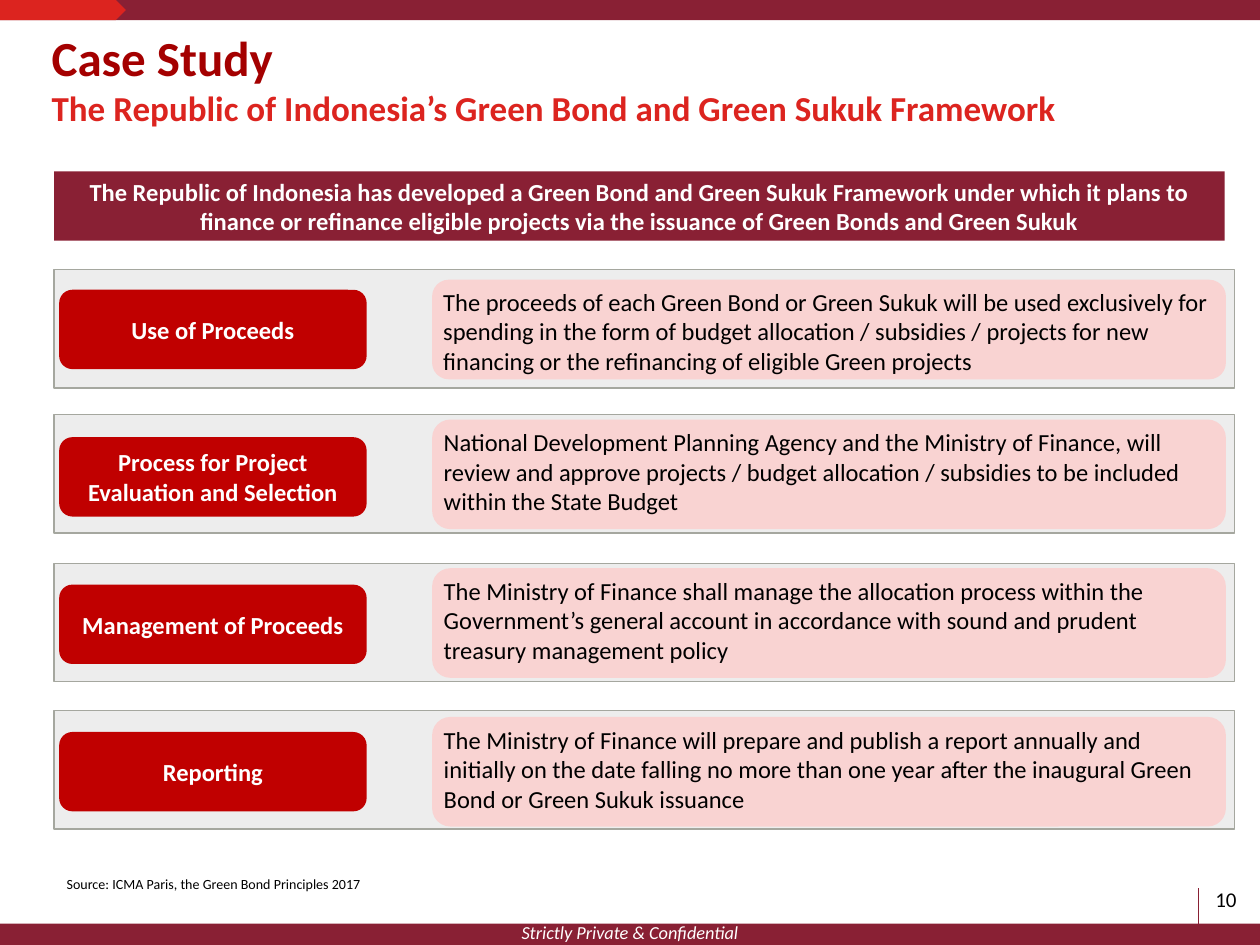
from lxml import etree
from pptx import Presentation
from pptx.dml.color import RGBColor
from pptx.enum.shapes import MSO_CONNECTOR, MSO_SHAPE
from pptx.enum.text import MSO_ANCHOR, MSO_AUTO_SIZE, PP_ALIGN
from pptx.oxml.ns import qn
from pptx.util import Inches, Pt

COLORS = {
    "maroon": "892034", "scarlet": "DC241F", "title": "A40000", "label": "C00000",
    "pink": "F9D3D2", "panel": "D7D7D7", "border": "A5A79F",
    "white": "FFFFFF", "black": "000000",
}
ROWS = [
    (2.14, 0.08, 0.79, "Use of Proceeds",
     "The proceeds of each Green Bond or Green Sukuk will be used exclusively for spending in the form of "
     "budget allocation / subsidies / projects for new financing or the refinancing of eligible Green projects"),
    (3.29, 0.04, 0.87, "Process for Project Evaluation and Selection",
     "National Development Planning Agency and the Ministry of Finance, will review and approve projects / "
     "budget allocation / subsidies to be included within the State Budget"),
    (4.47, 0.04, 0.87, "Management of Proceeds",
     "The Ministry of Finance shall manage the allocation process within the Government’s general account "
     "in accordance with sound and prudent treasury management policy"),
    (5.64, 0.05, 0.87, "Reporting",
     "The Ministry of Finance will prepare and publish a report annually and initially on the date falling "
     "no more than one year after the inaugural Green Bond or Green Sukuk issuance"),
]
LABEL_TOP, LABEL_PITCH = 2.3, 1.17


def color(name):
    return RGBColor.from_string(COLORS[name])


def style(paragraph, size, color_name, bold=False, italic=False, align=PP_ALIGN.LEFT):
    paragraph.alignment = align
    font = paragraph.font
    font.name, font.size, font.bold, font.italic = "Calibri", Pt(size), bold, italic
    font.color.rgb = color(color_name)


def set_margins(frame, horizontal, vertical):
    frame.margin_left = frame.margin_right = Inches(horizontal)
    frame.margin_top = frame.margin_bottom = Inches(vertical)


def add_block(slide, kind, box, fill):
    shape = slide.shapes.add_shape(kind, *map(Inches, box))
    shape.shadow.inherit = False
    shape.fill.solid()
    shape.fill.fore_color.rgb = color(fill)
    shape.line.fill.background()
    return shape


def write_block(shape, text, color_name, bold=False, align=PP_ALIGN.LEFT, anchor=MSO_ANCHOR.TOP):
    frame = shape.text_frame
    frame.word_wrap = True
    frame.vertical_anchor = anchor
    set_margins(frame, 0.05, 0.02)
    frame.text = text
    style(frame.paragraphs[0], 14, color_name, bold, align=align)


def add_text(slide, box, text, size, color_name, italic=False, align=PP_ALIGN.LEFT):
    frame = slide.shapes.add_textbox(*map(Inches, box)).text_frame
    frame.word_wrap = True
    frame.text = text
    style(frame.paragraphs[0], size, color_name, italic=italic, align=align)
    return frame


def add_header(slide, left, top, width):
    add_block(slide, MSO_SHAPE.RECTANGLE, (left, top, width, 0.16), "maroon")
    add_block(slide, MSO_SHAPE.PENTAGON, (left, top, 1, 0.16), "scarlet")


def add_footer(slide, left, top, width):
    divider_x = Inches(left + 9.51)
    divider = slide.shapes.add_connector(
        MSO_CONNECTOR.STRAIGHT, divider_x, Inches(top - 0.28), divider_x, Inches(top + 0.02))
    divider.line.color.rgb = color("maroon")
    divider.line.width = Pt(0.75)
    etree.SubElement(divider._element.spPr, qn("a:effectLst"))
    add_block(slide, MSO_SHAPE.RECTANGLE, (left, top, width, 0.17), "maroon")
    add_text(slide, (left, top - 0.07, width, 0.45), "Strictly Private & Confidential",
             10.5, "white", italic=True, align=PP_ALIGN.CENTER)
    number = add_text(slide, (left + 9.54, top - 0.34, 0.38, 0.29), "10", 12, "black",
                      align=PP_ALIGN.CENTER)
    number.word_wrap = False
    number.vertical_anchor = MSO_ANCHOR.MIDDLE
    set_margins(number, 0, 0)


def add_title(slide, left, top, width, height):
    title = slide.shapes.title
    title.left, title.top, title.width, title.height = map(Inches, (left, top, width, height))
    frame = title.text_frame
    frame.auto_size = MSO_AUTO_SIZE.NONE
    frame.vertical_anchor = MSO_ANCHOR.TOP
    frame.text = "Case Study\nThe Republic of Indonesia’s Green Bond and Green Sukuk Framework"
    heading, subheading = frame.paragraphs
    style(heading, 28, "title", bold=True)
    style(subheading, 20, "scarlet", bold=True)


def add_summary(slide, left, top, width, height):
    banner = add_block(slide, MSO_SHAPE.RECTANGLE, (left, top, width, height), "maroon")
    write_block(banner,
                "The Republic of Indonesia has developed a Green Bond and Green Sukuk Framework under which it "
                "plans to finance or refinance eligible projects via the issuance of Green Bonds and Green Sukuk",
                "white", True, PP_ALIGN.CENTER, MSO_ANCHOR.MIDDLE)


def add_row(slide, left, top, label_top, detail_offset, detail_height, label, detail):
    panel = add_block(slide, MSO_SHAPE.RECTANGLE, (left, top, 9.37, 0.94), "panel")
    panel_color = panel.fill._xPr.find(qn("a:solidFill"))[0]
    etree.SubElement(panel_color, qn("a:alpha"), val="43000")
    panel.line.color.rgb = color("border")
    panel.line.width = Pt(0.75)
    label_shape = add_block(slide, MSO_SHAPE.ROUNDED_RECTANGLE,
                            (left + 0.04, label_top, 2.44, 0.63), "label")
    write_block(label_shape, label, "white", True, PP_ALIGN.CENTER, MSO_ANCHOR.MIDDLE)
    detail_shape = add_block(slide, MSO_SHAPE.ROUNDED_RECTANGLE,
                             (left + 3, top + detail_offset, 6.3, detail_height), "pink")
    write_block(detail_shape, detail, "black")


def main():
    presentation = Presentation()
    presentation.slide_width, presentation.slide_height = Inches(10), Inches(7.5)
    slide = presentation.slides.add_slide(presentation.slide_layouts[5])
    add_header(slide, 0, 0, 10)
    add_footer(slide, 0, 7.33, 10)
    add_title(slide, 0.31, 0.17, 9.16, 0.92)
    add_summary(slide, 0.43, 1.36, 9.29, 0.55)
    for index, (top, *details) in enumerate(ROWS):
        add_row(slide, 0.43, top, LABEL_TOP + index * LABEL_PITCH, *details)
    add_text(slide, (0.43, 6.9, 6.85, 0.24), "Source: ICMA Paris, the Green Bond Principles 2017", 8, "black")
    presentation.save("out.pptx")


if __name__ == "__main__":
    main()
